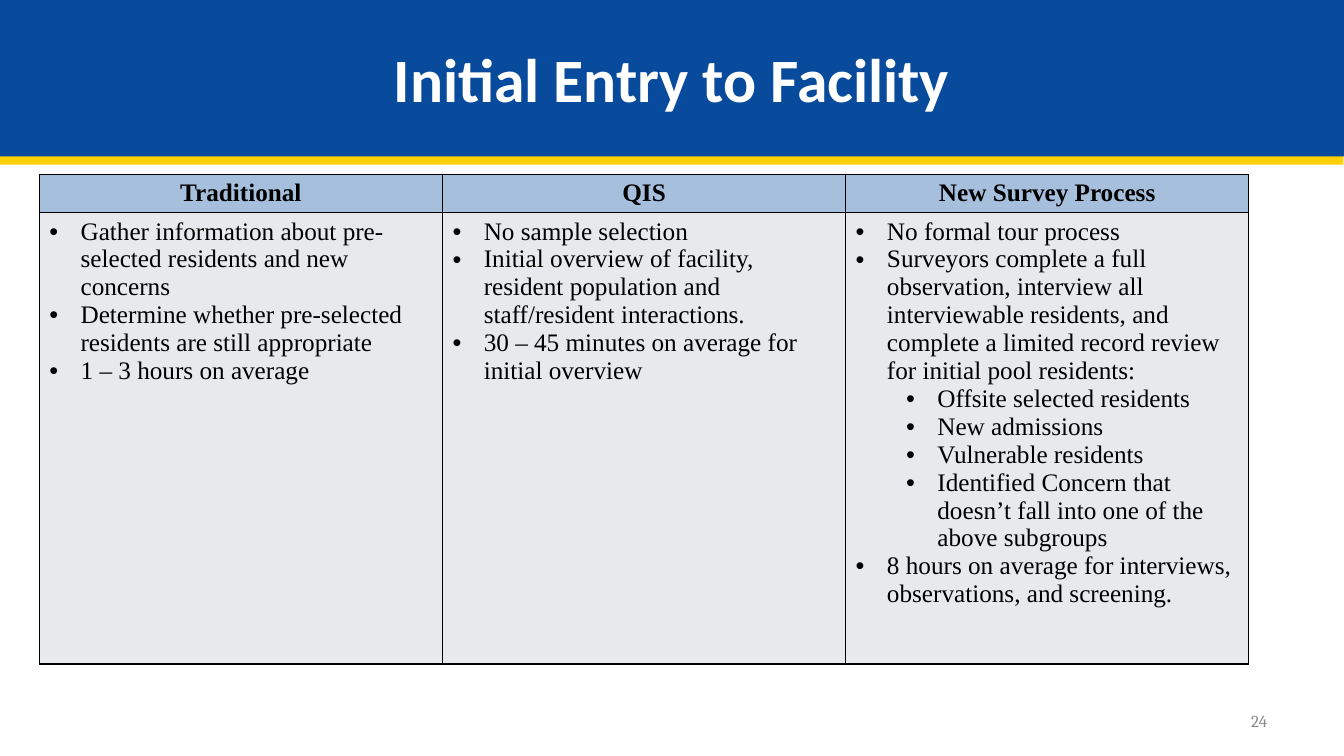
from pptx import Presentation
from pptx.dml.color import RGBColor
from pptx.enum.text import MSO_ANCHOR, MSO_AUTO_SIZE, PP_ALIGN
from pptx.oxml import parse_xml
from pptx.oxml.ns import nsdecls
from pptx.util import Inches, Pt

CENTER, LEFT, RIGHT = PP_ALIGN.CENTER, PP_ALIGN.LEFT, PP_ALIGN.RIGHT
MIDDLE = MSO_ANCHOR.MIDDLE
NO_AUTOFIT = MSO_AUTO_SIZE.NONE
TITLE_ONLY = 5
GRID = 40

PROCESSES = {
    "Traditional": [
        (0, "Gather information about pre-selected residents and new concerns"),
        (0, "Determine whether pre-selected residents are still appropriate"),
        (0, "1 – 3 hours on average"),
    ],
    "QIS": [
        (0, "No sample selection"),
        (0, "Initial overview of facility, resident population and "
            "staff/resident interactions."),
        (0, "30 – 45 minutes on average for initial overview"),
    ],
    "New Survey Process": [
        (0, "No formal tour process"),
        (0, "Surveyors complete a full observation, interview all interviewable "
            "residents, and complete a limited record review for initial pool residents:"),
        (1, "Offsite selected residents"),
        (1, "New admissions"),
        (1, "Vulnerable residents"),
        (1, "Identified Concern that doesn’t fall into one of the above subgroups"),
        (0, "8 hours on average for interviews, observations, and screening."),
    ],
}


def color(hex_code):
    return RGBColor.from_string(hex_code)


class SurveySlide:
    """Holds the deck's style and current slide, placed on a 40 by 40 grid."""

    navy, gold, white, black = "084A9C", "FFD004", "FFFFFF", "000000"
    header_blue, body_gray, number_gray = "A6BFDD", "E8E9EC", "8C8C8C"
    title_font, table_font, number_font = "Calibri", "Times New Roman", "Cambria"

    def __init__(self, deck):
        self.column = deck.slide_width / GRID
        self.row = deck.slide_height / GRID
        self.slide = deck.slides.add_slide(deck.slide_layouts[TITLE_ONLY])

    def box(self, left, top, width, height):
        return (round(left * self.column), round(top * self.row),
                round(width * self.column), round(height * self.row))

    def add_wording(self, paragraph, wording, font, size, ink, bold=False, align=LEFT):
        paragraph.alignment = align
        run = paragraph.add_run()
        run.text = wording
        run.font.name, run.font.size, run.font.bold = font, Pt(size), bold
        run.font.color.rgb = color(ink)

    def title(self, wording, *area):
        banner = self.slide.shapes.title
        banner.left, banner.top, banner.width, banner.height = self.box(*area)
        banner.fill.solid()
        banner.fill.fore_color.rgb = color(self.navy)
        banner._element.spPr.append(parse_xml(
            f'<a:effectLst {nsdecls("a")}><a:outerShdw blurRad="0" dist="{Pt(6)}" '
            f'dir="{94 * 60000}" algn="t" rotWithShape="0">'
            f'<a:srgbClr val="{self.gold}"/></a:outerShdw></a:effectLst>'))
        frame = banner.text_frame
        frame.auto_size, frame.vertical_anchor = NO_AUTOFIT, MIDDLE
        self.add_wording(frame.paragraphs[0], wording, self.title_font, 44,
                         self.white, True, CENTER)

    def bullet(self, paragraph, level):
        paragraph.level = level
        properties = paragraph._p.get_or_add_pPr()
        properties.set("marL", str(Inches(0.31 + 0.5 * level)))
        properties.set("indent", str(Inches(-0.31)))
        for mark in (f'<a:buClr {nsdecls("a")}><a:srgbClr val="{self.black}"/></a:buClr>',
                     f'<a:buFont {nsdecls("a")} typeface="Arial"/>',
                     f'<a:buChar {nsdecls("a")} char="•"/>'):
            properties.append(parse_xml(mark))

    def style_cell(self, cell, fill):
        for side in "LRTB":
            cell._tc.get_or_add_tcPr().append(parse_xml(
                f'<a:ln{side} {nsdecls("a")} w="{Pt(1)}"><a:solidFill>'
                f'<a:srgbClr val="{self.black}"/></a:solidFill></a:ln{side}>'))
        cell.fill.solid()
        cell.fill.fore_color.rgb = color(fill)

    def comparison(self, processes, left, top, width, row_heights):
        area = self.box(left, top, width, sum(row_heights))
        table = self.slide.shapes.add_table(
            len(row_heights), len(processes), *area).table
        for table_row, height in zip(table.rows, row_heights):
            table_row.height = round(height * self.row)
        for index, (process, points) in enumerate(processes.items()):
            heading, details = table.cell(0, index), table.cell(1, index)
            self.style_cell(heading, self.header_blue)
            self.style_cell(details, self.body_gray)
            self.add_wording(heading.text_frame.paragraphs[0], process,
                             self.table_font, 18, self.black, True, CENTER)
            frame = details.text_frame
            for position, (level, point) in enumerate(points):
                paragraph = frame.add_paragraph() if position else frame.paragraphs[0]
                self.bullet(paragraph, level)
                self.add_wording(paragraph, point, self.table_font, 18, self.black)

    def page_number(self, number, *area):
        frame = self.slide.shapes.add_textbox(*self.box(*area)).text_frame
        frame.word_wrap, frame.vertical_anchor = True, MIDDLE
        self.add_wording(frame.paragraphs[0], number, self.number_font, 12,
                         self.number_gray, align=RIGHT)


def main():
    deck = Presentation()
    deck.slide_width, deck.slide_height = Inches(13.33), Inches(7.5)
    entry = SurveySlide(deck)
    entry.title("Initial Entry to Facility", 0, 0, GRID, 8.27)
    entry.comparison(PROCESSES, 1.17, 9.23, 36, (1.92, 23.89))
    entry.page_number("24", 28.68, 37.07, 9.33, 2.13)
    deck.save("out.pptx")


if __name__ == "__main__":
    main()
